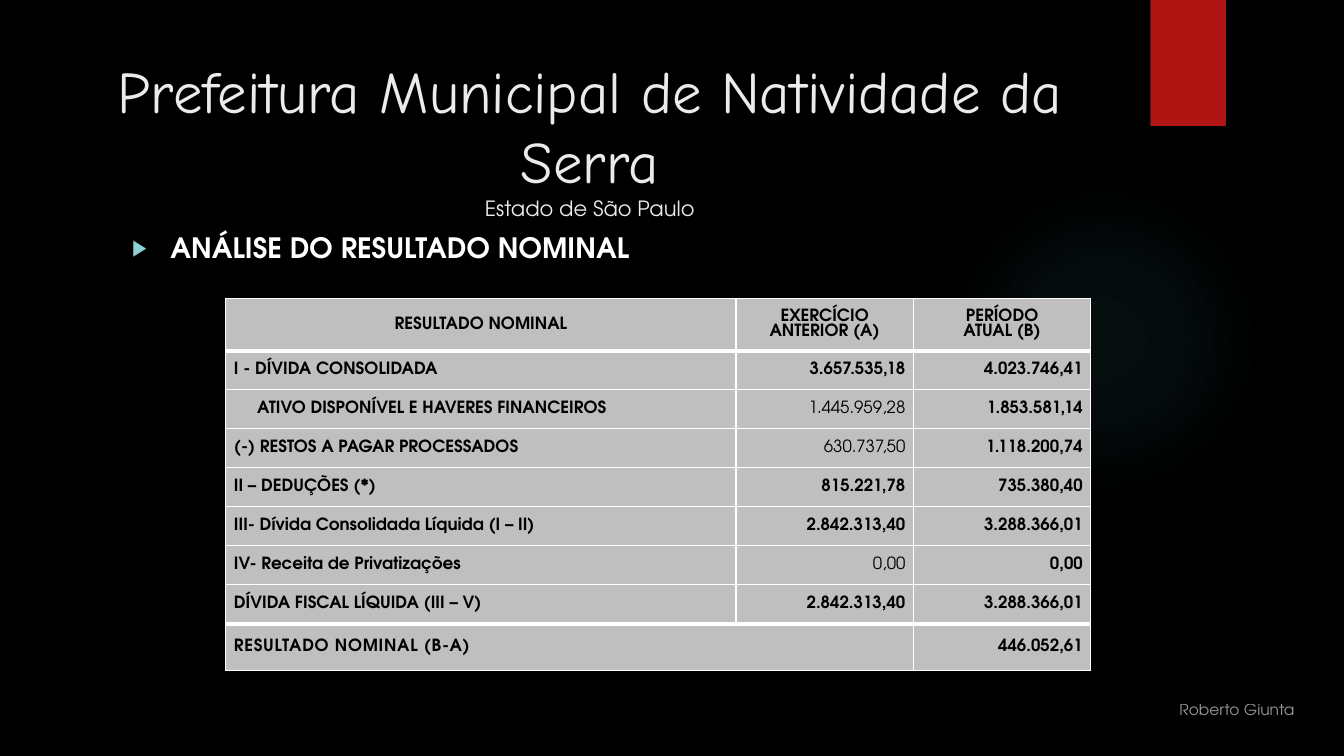
from lxml import etree
from pptx import Presentation
from pptx.dml.color import RGBColor
from pptx.enum.shapes import MSO_SHAPE
from pptx.enum.text import MSO_ANCHOR, MSO_AUTO_SIZE, PP_ALIGN
from pptx.oxml import parse_xml
from pptx.oxml.ns import nsdecls, qn
from pptx.util import Inches, Pt

LEFT, CENTER, RIGHT = PP_ALIGN.LEFT, PP_ALIGN.CENTER, PP_ALIGN.RIGHT
TOP, MIDDLE, BOTTOM = MSO_ANCHOR.TOP, MSO_ANCHOR.MIDDLE, MSO_ANCHOR.BOTTOM
NO_AUTOFIT = MSO_AUTO_SIZE.NONE
RECTANGLE, OVAL = MSO_SHAPE.RECTANGLE, MSO_SHAPE.OVAL

BLACK = RGBColor(0x00, 0x00, 0x00)
WHITE = RGBColor(0xFF, 0xFF, 0xFF)
TITLE_GRAY = RGBColor(0xEB, 0xEB, 0xEB)
CELL_GRAY = RGBColor(0xBF, 0xBF, 0xBF)
RED = RGBColor(0xB0, 0x15, 0x13)
TEAL = RGBColor(0x50, 0xB9, 0xC1)
BULLET_TEAL = RGBColor(0x8A, 0xD0, 0xD6)

TITLE_FONT = "Comic Neue"
BODY_FONT = "TeX Gyre Adventor"

COLUMN_WIDTHS = [5.06, 1.76, 1.76]
HEADER_HEIGHT, TOTAL_HEIGHT, TABLE_HEIGHT = 0.52, 0.46, 3.69
HEADER = ["RESULTADO NOMINAL", "EXERCÍCIO\nANTERIOR (A)", "PERÍODO\nATUAL (B)"]
ROWS = [
    ["I - DÍVIDA CONSOLIDADA", "3.657.535,18", "4.023.746,41"],
    ["ATIVO DISPONÍVEL E HAVERES FINANCEIROS", "1.445.959,28", "1.853.581,14"],
    ["(-) RESTOS A PAGAR PROCESSADOS", "630.737,50", "1.118.200,74"],
    ["II – DEDUÇÕES (*)", "815.221,78", "735.380,40"],
    ["III- Dívida Consolidada Líquida (I – II)", "2.842.313,40", "3.288.366,01"],
    ["IV- Receita de Privatizações", "0,00", "0,00"],
    ["DÍVIDA FISCAL LÍQUIDA (III – V)", "2.842.313,40", "3.288.366,01"],
    ["RESULTADO NOMINAL (B-A)", "", "446.052,61"],
]
INDENTED_ROW = 2
TOTAL_ROW = len(ROWS)
REGULAR_CELLS = {(2, 1), (3, 1), (6, 1)}
DETAIL_COUNT = TOTAL_ROW - 1
DETAIL_HEIGHT = (TABLE_HEIGHT - HEADER_HEIGHT - TOTAL_HEIGHT) / DETAIL_COUNT
ROW_HEIGHTS = [HEADER_HEIGHT] + [DETAIL_HEIGHT] * DETAIL_COUNT + [TOTAL_HEIGHT]


def place(shape, left, top, width, height):
    shape.left, shape.top = Inches(left), Inches(top)
    shape.width, shape.height = Inches(width), Inches(height)


def set_font(font, size, color, name=BODY_FONT, bold=False):
    font.size, font.name, font.bold = Pt(size), name, bold
    font.color.rgb = color


def set_frame(frame, anchor):
    frame.word_wrap = True
    frame.auto_size = NO_AUTOFIT
    frame.vertical_anchor = anchor


def add_glow(slide, left, top, size):
    glow = slide.shapes.add_shape(OVAL, Inches(left), Inches(top), Inches(size), Inches(size))
    glow.shadow.inherit = False
    glow.line.fill.background()
    stops = "".join(
        f'<a:gs pos="{position * 1000}"><a:srgbClr val="{TEAL}">'
        f'<a:alpha val="{alpha * 1000}"/></a:srgbClr></a:gs>'
        for position, alpha in [(0, 7), (36, 6), (69, 0), (100, 0)])
    gradient = parse_xml(
        f'<a:gradFill {nsdecls("a")} rotWithShape="1"><a:gsLst>{stops}</a:gsLst>'
        '<a:path path="circle"><a:fillToRect l="50000" t="50000" r="50000" b="50000"/>'
        '</a:path></a:gradFill>')
    glow.element.spPr.find(qn("a:prstGeom")).addnext(gradient)


def add_ribbon(slide, left, top, width, height):
    ribbon = slide.shapes.add_shape(
        RECTANGLE, Inches(left), Inches(top), Inches(width), Inches(height))
    ribbon.shadow.inherit = False
    ribbon.fill.solid()
    ribbon.fill.fore_color.rgb = RED
    ribbon.line.fill.background()


def fill_title(slide, left, top, width, height):
    title = slide.shapes.title
    place(title, left, top, width, height)
    set_frame(title.text_frame, TOP)
    paragraph = title.text_frame.paragraphs[0]
    paragraph.alignment = CENTER
    town = paragraph.add_run()
    town.text = "Prefeitura Municipal de Natividade da Serra"
    set_font(town.font, 42, TITLE_GRAY, TITLE_FONT)
    paragraph.add_line_break()
    state = paragraph.add_run()
    state.text = "Estado de São Paulo"
    set_font(state.font, 15, TITLE_GRAY)


def fill_body(slide, left, top, width, height):
    body = slide.placeholders[1]
    place(body, left, top, width, height)
    set_frame(body.text_frame, TOP)
    paragraph = body.text_frame.paragraphs[0]
    paragraph.text = "ANÁLISE DO RESULTADO NOMINAL"
    properties = paragraph._p.get_or_add_pPr()
    properties.set("marL", str(Inches(0.38)))
    properties.set("indent", str(-Inches(0.38)))
    color = etree.SubElement(properties, qn("a:buClr"))
    etree.SubElement(color, qn("a:srgbClr"), val=str(BULLET_TEAL))
    etree.SubElement(properties, qn("a:buSzPct"), val="80000")
    etree.SubElement(properties, qn("a:buChar"), char="▶")
    paragraph.space_before = Pt(0)
    set_font(paragraph.font, 20, WHITE, bold=True)


def set_borders(cell, row):
    """Thin white lines, thick under the header and above the total."""
    widths = {"lnL": 1, "lnR": 1,
              "lnT": 3 if row in (1, TOTAL_ROW) else 1,
              "lnB": 3 if row in (0, TOTAL_ROW - 1) else 1}
    properties = cell._tc.get_or_add_tcPr()
    for position, (tag, width) in enumerate(widths.items()):
        properties.insert(position, parse_xml(
            f'<a:{tag} {nsdecls("a")} w="{Pt(width)}"><a:solidFill>'
            f'<a:srgbClr val="{WHITE}"/></a:solidFill></a:{tag}>'))


def fill_cell(cell, row, column, text):
    cell.fill.solid()
    cell.fill.fore_color.rgb = CELL_GRAY
    cell.vertical_anchor = MIDDLE
    cell.margin_left = cell.margin_right = Inches(0.08)
    cell.margin_top = cell.margin_bottom = 0
    cell.text = text
    for paragraph in cell.text_frame.paragraphs:
        paragraph.alignment = CENTER if row == 0 else RIGHT if column else LEFT
        if (row, column) == (INDENTED_ROW, 0):
            paragraph._p.get_or_add_pPr().set("marL", str(Inches(0.23)))
        set_font(paragraph.font, 12, BLACK, bold=(row, column) not in REGULAR_CELLS)
        if (row, column) == (TOTAL_ROW, 0):
            paragraph.runs[0].font._element.set("spc", "50")
    set_borders(cell, row)


def add_result_table(slide, left, top):
    table = slide.shapes.add_table(
        len(ROW_HEIGHTS), len(COLUMN_WIDTHS), Inches(left), Inches(top),
        Inches(sum(COLUMN_WIDTHS)), Inches(TABLE_HEIGHT)).table
    table.first_row = table.horz_banding = False
    for column, width in zip(table.columns, COLUMN_WIDTHS):
        column.width = Inches(width)
    for row, height in zip(table.rows, ROW_HEIGHTS):
        row.height = Inches(height)
    for row, texts in enumerate([HEADER] + ROWS):
        for column, text in enumerate(texts):
            fill_cell(table.cell(row, column), row, column, text)
    table.cell(TOTAL_ROW, 0).merge(table.cell(TOTAL_ROW, 1))


def add_author(slide, left, top, width, height):
    box = slide.shapes.add_textbox(Inches(left), Inches(top), Inches(width), Inches(height))
    set_frame(box.text_frame, BOTTOM)
    paragraph = box.text_frame.paragraphs[0]
    paragraph.text = "Roberto Giunta"
    paragraph.alignment = RIGHT
    run_font = paragraph.runs[0].font
    set_font(run_font, 11, WHITE)
    color = run_font._element.find(".//" + qn("a:srgbClr"))
    etree.SubElement(color, qn("a:alpha"), val="60000")


def main():
    presentation = Presentation()
    presentation.slide_width, presentation.slide_height = Inches(13.33), Inches(7.5)
    slide = presentation.slides.add_slide(presentation.slide_layouts[1])
    slide.background.fill.solid()
    slide.background.fill.fore_color.rgb = BLACK

    # Decoration
    add_glow(slide, 9.41, 1.83, 3.08)
    add_ribbon(slide, 11.41, 0, 0.75, 1.25)
    # Headings
    fill_title(slide, 0.71, 0.49, 10.28, 1.53)
    fill_body(slide, 1.21, 2.24, 9.78, 4.59)
    # Results and author
    add_result_table(slide, 2.24, 2.96)
    add_author(slide, 8.72, 6.85, 4.22, 0.33)
    presentation.save("out.pptx")


if __name__ == "__main__":
    main()
